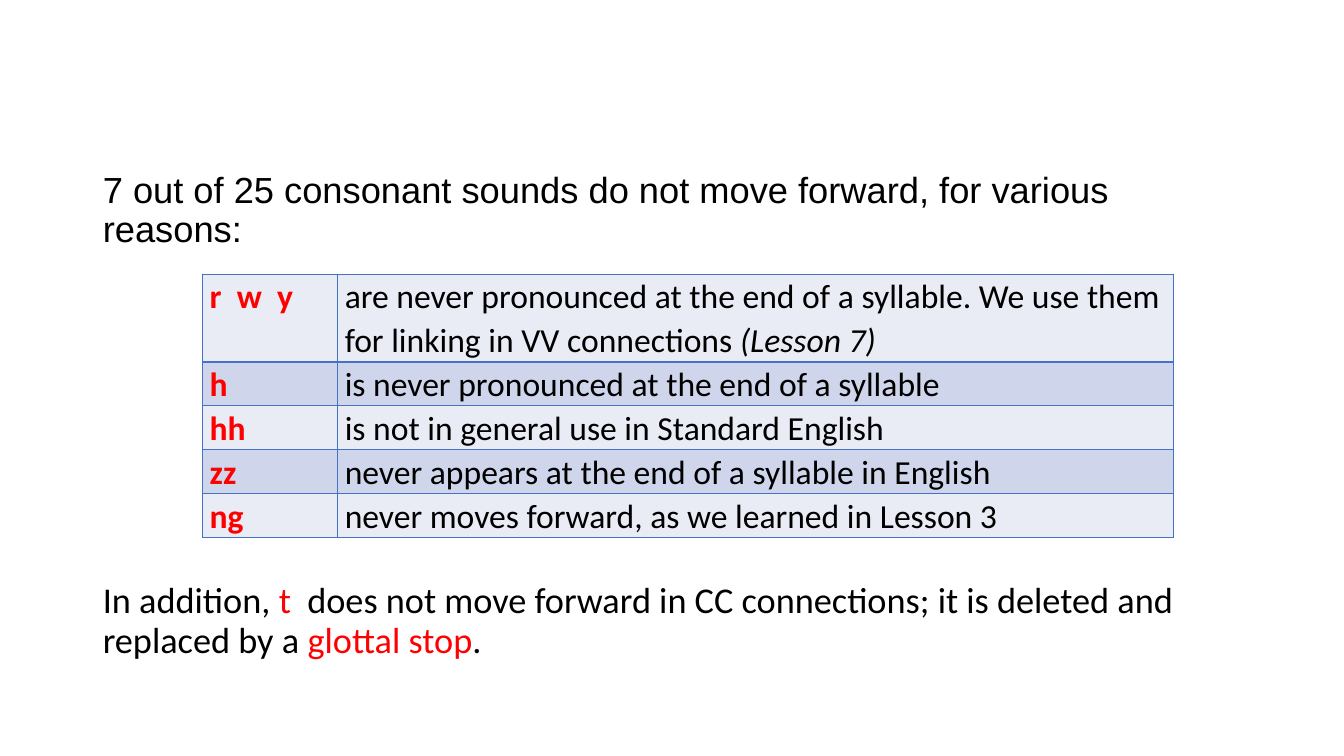
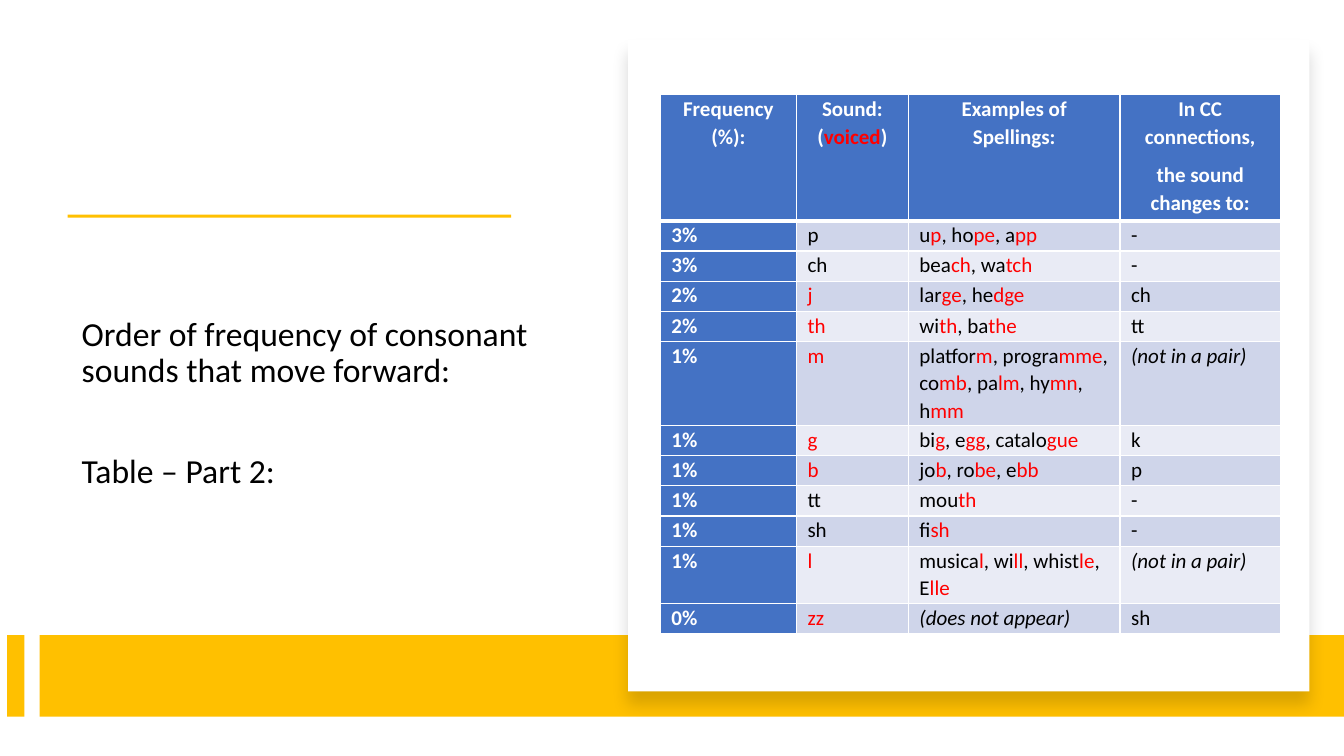
"""Builds two slides on consonant sounds that do or do not move forward."""
import dataclasses

import lxml.etree
import pptx
import pptx.dml.color
import pptx.enum.shapes
import pptx.enum.text
import pptx.oxml
import pptx.oxml.ns
import pptx.util

CENTER = pptx.enum.text.PP_ALIGN.CENTER
LEFT = pptx.enum.text.PP_ALIGN.LEFT
TOP = pptx.enum.text.MSO_ANCHOR.TOP
MIDDLE = pptx.enum.text.MSO_ANCHOR.MIDDLE


@dataclasses.dataclass(frozen=True)
class Theme:
    """Colours, fonts and type sizes in points."""
    ink: str = "000000"
    accent: str = "FF0000"
    paper: str = "FFFFFF"
    gold: str = "FFC000"
    blue: str = "4472C4"
    bands: tuple = ("E9EBF5", "CFD5EA")
    font: str = "Calibri"
    intro_font: str = "Arial"
    statement: float = 25.9
    caption: float = 24
    large_cell: float = 24
    small_cell: float = 15


@dataclasses.dataclass(frozen=True)
class TableStyle:
    """Look of one table."""
    size: float
    border: str
    margin: float
    key_color: str
    key_fill: str = ""
    header: bool = False


def color(value):
    """Return an RGB colour from its hex form."""
    return pptx.dml.color.RGBColor.from_string(value)


class Deck:
    """Holds the theme and current slide; areas are percentages of the slide."""

    def __init__(self, theme):
        self.theme = theme
        self.presentation = pptx.Presentation()
        self.presentation.slide_width = pptx.util.Inches(13.33)
        self.presentation.slide_height = pptx.util.Inches(7.5)
        self.slide = None

    def across(self, share):
        """Return a percentage of the slide width."""
        return round(self.presentation.slide_width * share / 100)

    def down(self, share):
        """Return a percentage of the slide height."""
        return round(self.presentation.slide_height * share / 100)

    def area(self, left, top, width, height):
        """Return an area in slide units."""
        return self.across(left), self.down(top), self.across(width), self.down(height)

    def add_slide(self):
        """Start a slide that has only a body placeholder."""
        layout = self.presentation.slide_layouts[1]
        self.slide = self.presentation.slides.add_slide(layout)
        title = self.slide.shapes.title.element
        title.getparent().remove(title)

    def add_text(self, paragraph, text, size, ink, bold=False, font=None):
        """Add text in which *stars* mark accents and _underscores_ italics."""
        for accent_index, part in enumerate(text.split("*")):
            for italic_index, piece in enumerate(part.split("_")):
                if not piece:
                    continue
                run = paragraph.add_run()
                run.text = piece
                run.font.name = font or self.theme.font
                run.font.size = pptx.util.Pt(size)
                run.font.bold = bold
                run.font.italic = italic_index % 2 == 1
                run.font.color.rgb = color(self.theme.accent if accent_index % 2 else ink)

    def body(self, area, entries, size, gap, anchor, top=0.05, bottom=0.05):
        """Fill the body placeholder with (text, font) entries set a gap apart."""
        shape = self.slide.placeholders[1]
        shape.left, shape.top, shape.width, shape.height = self.area(*area)
        frame = shape.text_frame
        frame.word_wrap = True
        frame.auto_size = pptx.enum.text.MSO_AUTO_SIZE.NONE
        frame.vertical_anchor = anchor
        frame.margin_top = pptx.util.Inches(top)
        frame.margin_bottom = pptx.util.Inches(bottom)
        for index, (text, font) in enumerate(entries):
            paragraph = frame.add_paragraph() if index else frame.paragraphs[0]
            paragraph.line_spacing = 0.9
            paragraph.space_before = pptx.util.Pt(gap if index else 0)
            properties = paragraph._p.get_or_add_pPr()
            properties.set("marL", "0")
            properties.set("indent", "0")
            lxml.etree.SubElement(properties, pptx.oxml.ns.qn("a:buNone"))
            self.add_text(paragraph, text, size, self.theme.ink, font=font)

    def panel(self, area, fill, shadow=False):
        """Add a plain rectangle, with a soft shadow below on request."""
        kind = pptx.enum.shapes.MSO_SHAPE.RECTANGLE
        shape = self.slide.shapes.add_shape(kind, *self.area(*area))
        shape.fill.solid()
        shape.fill.fore_color.rgb = color(fill)
        shape.line.fill.background()
        shape.shadow.inherit = False
        if shadow:
            effects = shape._element.spPr.find(pptx.oxml.ns.qn("a:effectLst"))
            effects.append(pptx.oxml.parse_xml(
                f'<a:outerShdw {pptx.oxml.ns.nsdecls("a")} blurRad="{pptx.util.Pt(11)}" '
                f'dist="{pptx.util.Pt(10)}" dir="5400000" algn="t" rotWithShape="0">'
                f'<a:srgbClr val="{self.theme.ink}"><a:alpha val="15000"/></a:srgbClr>'
                '</a:outerShdw>'))

    def borders(self, cell, line, top, bottom):
        """Draw the four borders of a cell."""
        properties = cell._tc.get_or_add_tcPr()
        widths = {"lnL": 1, "lnR": 1, "lnT": top, "lnB": bottom}
        for index, (side, width) in enumerate(widths.items()):
            properties.insert(index, pptx.oxml.parse_xml(
                f'<a:{side} {pptx.oxml.ns.nsdecls("a")} w="{pptx.util.Pt(width)}">'
                f'<a:solidFill><a:srgbClr val="{line}"/></a:solidFill></a:{side}>'))

    def cell(self, cell, text, row, column, style):
        """Fill and format one table cell."""
        is_header = style.header and row == 0
        is_key = is_header or column == 0
        cell.margin_left = cell.margin_right = pptx.util.Inches(style.margin)
        cell.margin_top = cell.margin_bottom = 0
        cell.fill.solid()
        band = self.theme.bands[row % 2]
        cell.fill.fore_color.rgb = color(style.key_fill if is_key and style.key_fill else band)
        below_header = style.header and row == 1
        self.borders(cell, style.border, 3 if below_header else 1, 3 if is_header else 1)
        for index, line in enumerate(text.split("\n")):
            frame = cell.text_frame
            paragraph = frame.add_paragraph() if index else frame.paragraphs[0]
            paragraph.alignment = CENTER if is_header else LEFT
            paragraph.line_spacing = 1.07
            paragraph.space_after = pptx.util.Pt(8)
            ink = style.key_color if is_key else self.theme.ink
            self.add_text(paragraph, line, style.size, ink, bold=is_key)

    def table(self, left, top, columns, heights, rows, style):
        """Add a table from its column widths, row heights and rows of text."""
        area = self.area(left, top, sum(columns), sum(heights))
        table = self.slide.shapes.add_table(len(rows), len(columns), *area).table
        table.first_row = table.horz_banding = False
        for column, width in zip(table.columns, columns):
            column.width = self.across(width)
        for row_index, (texts, height) in enumerate(zip(rows, heights)):
            table.rows[row_index].height = self.down(height)
            for column_index, text in enumerate(texts):
                cell = table.cell(row_index, column_index)
                self.cell(cell, text, row_index, column_index, style)


EXCEPTIONS = [
    ("r  w  y", "are never pronounced at the end of a syllable. "
                "We use them for linking in VV connections _(Lesson 7)_"),
    ("h", "is never pronounced at the end of a syllable"),
    ("hh", "is not in general use in Standard English"),
    ("zz", "never appears at the end of a syllable in English"),
    ("ng", "never moves forward, as we learned in Lesson 3"),
]

FREQUENCIES = [
    ("Frequency (%):", "Sound: (*voiced*)", "Examples of Spellings:",
     "In CC connections,\nthe sound changes to:"),
    ("3%", "p", "u*p*, ho*pe*, a*pp*", "-"),
    ("3%", "ch", "bea*ch*, wa*tch*", "-"),
    ("2%", "*j*", "lar*ge*, he*dge*", "ch"),
    ("2%", "*th*", "wi*th*, ba*the*", "tt"),
    ("1%", "*m*", "platfor*m*, progra*mme*, co*mb*, pa*lm*, hy*mn*, h*mm*",
     "_(not in a pair)_"),
    ("1%", "*g*", "bi*g*, e*gg*, catalo*gue*", "k"),
    ("1%", "*b*", "jo*b*, ro*be*, e*bb*", "p"),
    ("1%", "tt", "mou*th*", "-"),
    ("1%", "sh", "fi*sh*", "-"),
    ("1%", "*l*", "musica*l*, wi*ll*, whist*le*, E*lle*", "_(not in a pair)_"),
    ("0%", "*zz*", "_(does not appear)_", "sh"),
]


def exceptions_slide(deck):
    """Build the slide on sounds that do not move forward."""
    theme = deck.theme
    deck.add_slide()
    deck.body((6.9, 9.6, 86.25, 80.4), [
        ("7 out of 25 consonant sounds do not move forward, for various reasons:",
         theme.intro_font),
        ("In addition, *t*  does not move forward in CC connections; "
         "it is deleted and replaced by a *glottal stop*.", theme.font),
    ], theme.statement, gap=237, anchor=TOP, top=0.99)
    style = TableStyle(theme.large_cell, theme.blue, 0.07, theme.accent)
    deck.table(15.08, 36.27, [10.05, 62.2], [10.8] + [5.2] * 4, EXCEPTIONS, style)


def frequency_slide(deck):
    """Build the slide with the second part of the frequency table."""
    theme = deck.theme
    deck.add_slide()
    deck.panel((5.03, 28.4, 33, 0.4), theme.gold)
    deck.body((5.33, 29.6, 35.1, 51.2), [
        ("Order of frequency of consonant sounds that move forward:", theme.font),
        ("Table – Part 2:", theme.font),
    ], theme.caption, gap=46, anchor=MIDDLE, bottom=0.31)
    for left, width in ((0.53, 1.28), (2.96, 97.04)):
        deck.panel((left, 84, width, 10.8), theme.gold)
    deck.panel((46.73, 5.2, 50.7, 86.27), theme.paper, shadow=True)
    style = TableStyle(theme.small_cell, theme.paper, 0.11, theme.paper, theme.blue, True)
    heights = [16.67] + [4] * 4 + [11.07] + [4] * 4 + [7.6, 4]
    deck.table(49.13, 12.53, [10.13, 8.33, 15.75, 11.93], heights, FREQUENCIES, style)


def main():
    """Build and save the presentation."""
    deck = Deck(Theme())
    exceptions_slide(deck)
    frequency_slide(deck)
    deck.presentation.save("out.pptx")


if __name__ == "__main__":
    main()
